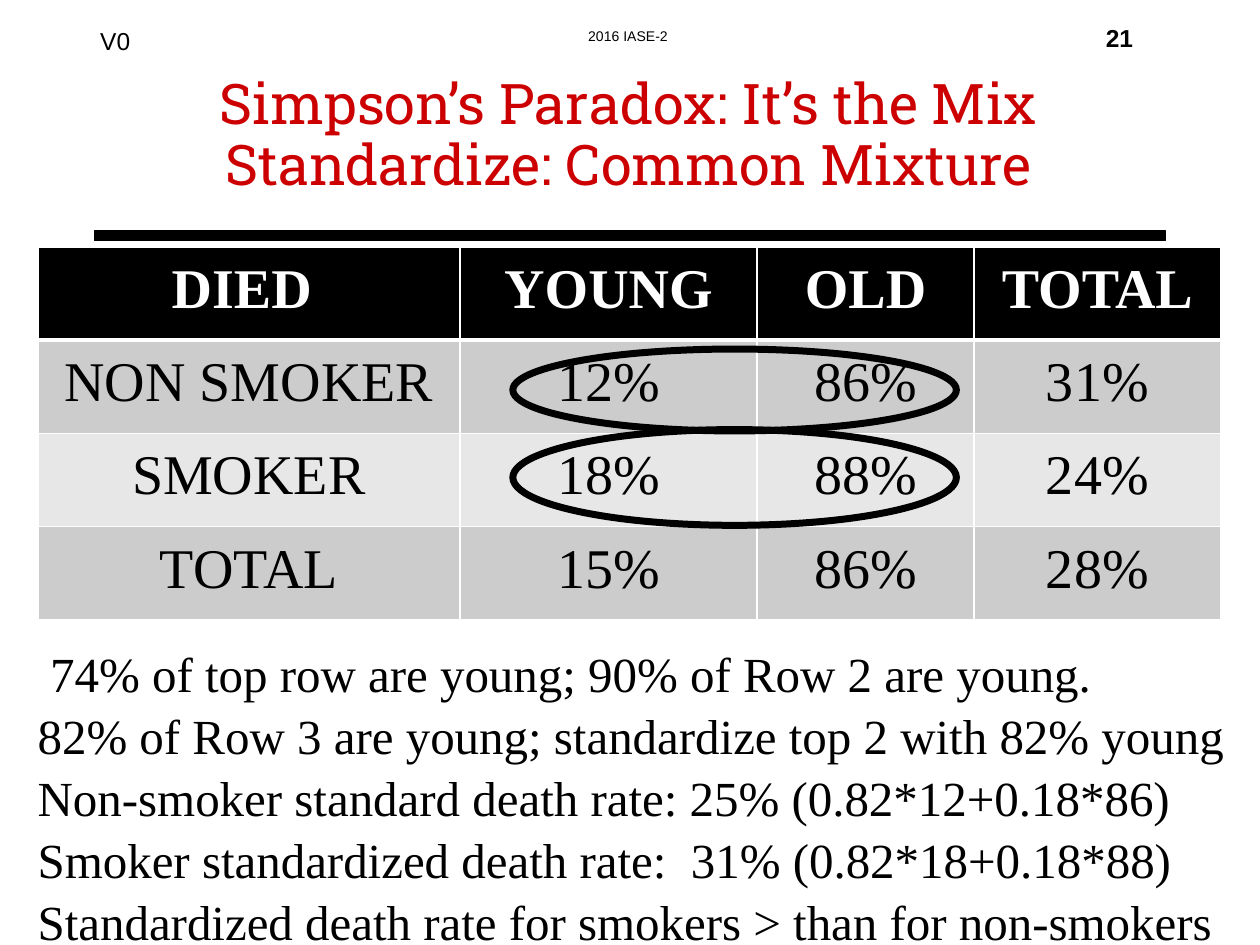
from dataclasses import dataclass

from lxml.etree import SubElement
from pptx import Presentation
from pptx.dml.color import RGBColor
from pptx.enum.shapes import MSO_SHAPE
from pptx.enum.text import MSO_ANCHOR, PP_ALIGN
from pptx.oxml.ns import qn
from pptx.util import Inches, Pt

COLORS = {
    "black": "000000",
    "white": "FFFFFF",
    "title": "CC0000",
    "dark band": "CCCCCC",
    "light band": "E7E7E7",
}
SERIF = "Times New Roman"


@dataclass
class TextBlock:
    left: float
    top: float
    width: float
    height: float
    lines: list[str]
    size: float
    font: str = "Arial"
    color: str = "black"
    bold: bool = False
    align: PP_ALIGN = PP_ALIGN.CENTER
    anchor: MSO_ANCHOR = MSO_ANCHOR.TOP
    spacing: float = 1.0


@dataclass
class Ring:
    top: float
    height: float


TEXT_BLOCKS = [
    TextBlock(0.58, 0.16, 0.67, 0.37, ["V0"], 14),
    TextBlock(3.62, 0.17, 2.73, 0.25, ["2016 IASE-2"], 8),
    TextBlock(8.55, 0.13, 0.67, 0.37, ["21"], 14, bold=True),
    TextBlock(0.65, 0.5, 8.68, 1.17,
              ["Simpson’s Paradox: It’s the Mix", "Standardize: Common Mixture"],
              32, "Roboto Slab", "title", anchor=MSO_ANCHOR.MIDDLE, spacing=0.9),
    TextBlock(0.3, 5.06, 9.4, 0.5,
              ["74% of top row are young; 90% of Row 2 are young."],
              28, SERIF, align=PP_ALIGN.LEFT),
    TextBlock(0.2, 5.53, 9.65, 1.97,
              ["82% of Row 3 are young; standardize top 2 with 82% young",
               "Non-smoker standard death rate: 25% (0.82*12+0.18*86)",
               "Smoker standardized death rate:  31% (0.82*18+0.18*88)",
               "Standardized death rate for smokers > than for non-smokers"],
              28, SERIF, align=PP_ALIGN.LEFT, spacing=1.05),
]
DEATH_RATES = [
    ["DIED ", "YOUNG", "OLD", "TOTAL"],
    ["NON SMOKER", "12%", "86%", "31%"],
    ["SMOKER", "18%", "88%", "24%"],
    ["TOTAL", "15%", "86%", "28%"],
]
COLUMN_WIDTHS = [3.35, 2.36, 1.72, 1.96]
ROW_HEIGHT = 0.74
RINGS = [Ring(3.41, 0.76), Ring(2.77, 0.65)]


def rgb(name: str) -> RGBColor:
    return RGBColor.from_string(COLORS[name])


def add_span(paragraph, text: str, size: float, font: str, color: str, bold: bool) -> None:
    span = paragraph.add_run()
    span.text = text
    span.font.size = Pt(size)
    span.font.name = font
    span.font.bold = bold
    span.font.color.rgb = rgb(color)


def add_text(page, block: TextBlock) -> None:
    box = page.shapes.add_textbox(Inches(block.left), Inches(block.top),
                                  Inches(block.width), Inches(block.height))
    frame = box.text_frame
    frame.word_wrap = True
    frame.vertical_anchor = block.anchor
    paragraph = frame.paragraphs[0]
    paragraph.alignment = block.align
    paragraph.line_spacing = block.spacing
    for index, line in enumerate(block.lines):
        if index:
            paragraph.add_line_break()
        add_span(paragraph, line, block.size, block.font, block.color, block.bold)


def add_border(cell, side: str, width: float) -> None:
    line = SubElement(cell._tc.get_or_add_tcPr(), qn(f"a:{side}"), w=str(Pt(width)))
    fill = SubElement(line, qn("a:solidFill"))
    SubElement(fill, qn("a:srgbClr"), val=COLORS["white"])


def fill_cell(cell, text: str, row: int) -> None:
    header = row == 0
    widths = {"lnL": 1, "lnR": 1, "lnT": 3 if row == 1 else 1, "lnB": 3 if header else 1}
    for side, width in widths.items():
        add_border(cell, side, width)
    band = "black" if header else "dark band" if row % 2 else "light band"
    cell.fill.solid()
    cell.fill.fore_color.rgb = rgb(band)
    cell.vertical_anchor = MSO_ANCHOR.MIDDLE
    paragraph = cell.text_frame.paragraphs[0]
    paragraph.alignment = PP_ALIGN.CENTER
    paragraph.line_spacing = 0.8
    paragraph.space_before = Pt(6.4)
    add_span(paragraph, text, 32, SERIF, "white" if header else "black", header)


def add_rates_table(page) -> None:
    table = page.shapes.add_table(
        len(DEATH_RATES), len(COLUMN_WIDTHS), Inches(0.3), Inches(1.96),
        Inches(sum(COLUMN_WIDTHS)), Inches(ROW_HEIGHT * len(DEATH_RATES))).table
    for column, width in zip(table.columns, COLUMN_WIDTHS):
        column.width = Inches(width)
    for row, texts in enumerate(DEATH_RATES):
        table.rows[row].height = Inches(ROW_HEIGHT)
        for column, text in enumerate(texts):
            fill_cell(table.cell(row, column), text, row)


def add_rule(page) -> None:
    rule = page.shapes.add_shape(MSO_SHAPE.RECTANGLE, Inches(0.75), Inches(1.83),
                                 Inches(8.5), Inches(0.08))
    rule.shadow.inherit = False
    rule.fill.solid()
    rule.fill.fore_color.rgb = rgb("black")
    rule.line.color.rgb = rgb("black")
    rule.line.width = Pt(0.75)


def add_ring(page, ring: Ring) -> None:
    oval = page.shapes.add_shape(MSO_SHAPE.OVAL, Inches(4.07), Inches(ring.top),
                                 Inches(3.52), Inches(ring.height))
    oval.shadow.inherit = False
    oval.fill.background()
    oval.line.color.rgb = rgb("black")
    oval.line.width = Pt(4)


def main() -> None:
    deck = Presentation()
    deck.slide_width, deck.slide_height = Inches(10), Inches(7.5)
    page = deck.slides.add_slide(deck.slide_layouts[6])

    # Rule under the title, then all text around the table
    add_rule(page)
    for block in TEXT_BLOCKS:
        add_text(page, block)

    # Death rates, with the compared rates ringed
    add_rates_table(page)
    for ring in RINGS:
        add_ring(page, ring)

    deck.save("out.pptx")


if __name__ == "__main__":
    main()
